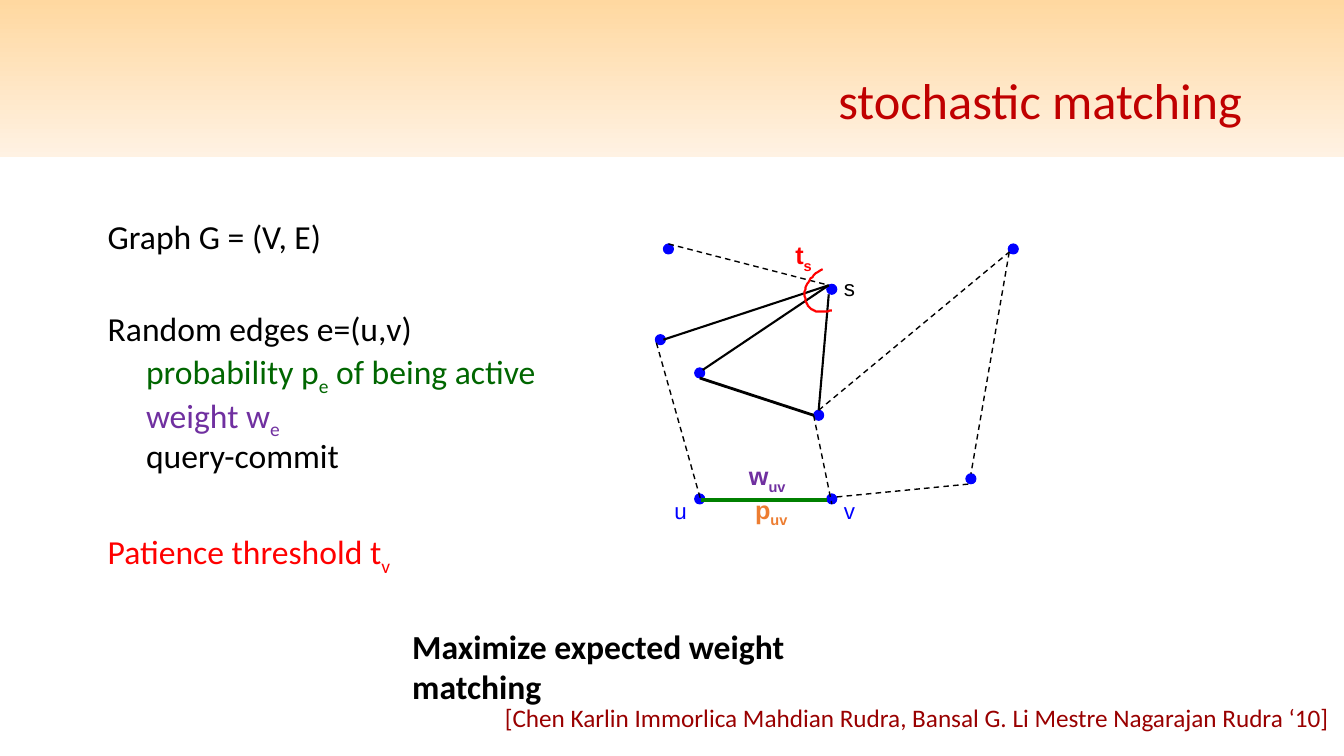
import pptx
import pptx.dml.color
import pptx.enum.dml
import pptx.enum.shapes
import pptx.enum.text
import pptx.oxml
import pptx.oxml.ns
import pptx.util

PX = 9144  # 100 px to the inch
SLIDE_WIDTH, SLIDE_HEIGHT = 1333, 750
COLORS = {
    "band_top": "FFD8A0", "band_bottom": "FFF2E3", "title": "C00000",
    "black": "000000", "green": "006600", "edge_green": "008000",
    "purple": "7030A0", "red": "FF0000", "blue": "0000FF",
    "orange": "ED7D31", "credit": "990000",
}
ALIGN = pptx.enum.text.PP_ALIGN
DASH = pptx.enum.dml.MSO_LINE
SHAPE = pptx.enum.shapes.MSO_SHAPE


def rgb(name):
    return pptx.dml.color.RGBColor.from_string(COLORS[name])


def px(*lengths):
    return [pptx.util.Emu(round(length * PX)) for length in lengths]


def set_attributes(target, values):
    for name, value in values.items():
        setattr(target, name, value)


def write_paragraph(paragraph, text, color, size, font="Calibri", bold=False, **layout):
    """Write text in which every second part between bars is a subscript."""
    set_attributes(paragraph, layout)
    for index, part in enumerate(text.split("|")):
        if not part:
            continue
        run = paragraph.add_run()
        run.text = part
        set_attributes(run.font, {"name": font, "size": pptx.util.Pt(size), "bold": bold})
        run.font.color.rgb = rgb(color)
        if index % 2:
            run._r.get_or_add_rPr().set("baseline", "-25000")


def add_text(slide, box, text, color, size, wrap=False, **formatting):
    frame = slide.shapes.add_textbox(*px(*box)).text_frame
    frame.word_wrap = wrap
    write_paragraph(frame.paragraphs[0], text, color, size, **formatting)


def add_header(slide, box):
    left, top, width, height = box
    title = slide.shapes.title

    # Gradient band behind the title
    band = slide.shapes.add_shape(SHAPE.RECTANGLE, *px(*box))
    band.shadow.inherit = False
    band.line.fill.background()
    band.fill.gradient()
    band.fill.gradient_angle = 270
    for stop, name in zip(band.fill.gradient_stops, ("band_top", "band_bottom")):
        stop.color.rgb = rgb(name)
    title._element.addprevious(band._element)

    # Title
    place = px(left + 92, top + 30, width - 183, height - 11)
    set_attributes(title, dict(zip(("left", "top", "width", "height"), place)))
    title.text_frame.vertical_anchor = pptx.enum.text.MSO_ANCHOR.MIDDLE
    write_paragraph(title.text_frame.paragraphs[0], "stochastic matching", "title", 36,
                    alignment=ALIGN.RIGHT, line_spacing=0.9)


def add_problem(slide, box):
    frame = slide.shapes.add_textbox(*px(*box)).text_frame
    frame.word_wrap = True
    # Text, colour, indent in px, space before in points
    lines = [
        ("Graph G = (V, E)", "black", 0, 10),
        ("Random edges e=(u,v)", "black", 0, 43),
        ("probability p|e| of being active", "green", 38, 5),
        ("weight w|e", "purple", 38, 5),
        ("query-commit", "black", 38, 5),
        ("Patience threshold t|v", "red", 0, 43),
    ]
    for index, (text, color, indent, space) in enumerate(lines):
        paragraph = frame.add_paragraph() if index else frame.paragraphs[0]
        write_paragraph(paragraph, text, color, 24, line_spacing=0.8,
                        space_before=pptx.util.Pt(space))
        paragraph._p.get_or_add_pPr().set("marL", str(indent * PX))


def add_edge(slide, start, end, color, width, dash=None):
    edge = slide.shapes.add_connector(
        pptx.enum.shapes.MSO_CONNECTOR.STRAIGHT, *px(*start, *end))
    edge.line.color.rgb = rgb(color)
    set_attributes(edge.line, {"width": pptx.util.Pt(width), "dash_style": dash})
    properties = edge._element.spPr
    properties.append(pptx.oxml.parse_xml(
        "<a:effectLst %s/>" % pptx.oxml.ns.nsdecls("a")))


def bezier_points(controls, steps=10):
    """Points along joined cubic curves, three new controls to each curve."""
    points = [controls[0]]
    for first in range(0, len(controls) - 1, 3):
        a, b, c, d = controls[first:first + 4]
        for step in range(1, steps + 1):
            t = step / steps
            s = 1 - t
            points.append(tuple(
                s ** 3 * a[i] + 3 * s * s * t * b[i] + 3 * s * t * t * c[i] + t ** 3 * d[i]
                for i in (0, 1)))
    return points


def add_graph(slide, box):
    left, top = box[:2]

    def at(point):
        return left + point[0], top + point[1]

    # Vertices
    vertices = [(8, 0), (0, 90), (39, 123), (157, 165), (39, 248),
                (170, 40), (350, 0), (308, 228), (170, 248)]
    for vertex in vertices:
        dot = slide.shapes.add_shape(SHAPE.OVAL, *px(*at(vertex), 10, 10))
        dot.shadow.inherit = False
        dot.fill.solid()
        dot.fill.fore_color.rgb = rgb("blue")
        dot.line.color.rgb = rgb("blue")
        dot.line.width = pptx.util.Pt(0.75)

    # Edges
    edge_styles = [
        (("black", 1.5), [((47, 125), (172, 41)), ((172, 41), (8, 95)),
                          ((172, 50), (162, 165))]),
        (("black", 1.5, DASH.ROUND_DOT), [((47, 254), (172, 254))]),
        (("edge_green", 2.25), [((45, 254), (170, 254))]),
        (("black", 2), [((44, 133), (157, 170))]),
        (("black", 1, DASH.DASH), [
            ((13, 0), (172, 41)), ((162, 165), (351, 8)), ((351, 8), (313, 228)),
            ((180, 251), (313, 238)), ((157, 170), (175, 258)), ((1, 98), (45, 254))]),
    ]
    for style, edges in edge_styles:
        for start, end in edges:
            add_edge(slide, at(start), at(end), *style)

    # Patience arc around s
    controls = [(175, 66), (168, 67), (162, 68), (158, 66), (154, 65), (151, 62),
                (150, 58), (148, 54), (147, 47), (150, 41), (152, 36), (158, 29), (166, 25)]
    points = [at(point) for point in bezier_points(controls)]
    builder = slide.shapes.build_freeform(*points[0], scale=PX)
    builder.add_line_segments(points[1:], close=False)
    arc = builder.convert_to_shape()
    arc.shadow.inherit = False
    arc.fill.background()
    arc.line.color.rgb = rgb("red")
    arc.line.width = pptx.util.Pt(1.5)

    # Labels: offset and size, text, colour, size, bold
    labels = [
        ((129, -9), (38, 40), "t|s", "red", 18, True),
        ((89, 243), (55, 40), "p|uv", "orange", 18, True),
        ((83, 210), (60, 40), "w|uv", "purple", 18, True),
        ((177, 25), (31, 37), "s", "black", 16, False),
        ((177, 246), (31, 37), "v", "blue", 16, False),
        ((9, 246), (32, 37), "u", "blue", 16, False),
    ]
    for offset, size, text, color, points_high, bold in labels:
        add_text(slide, (*at(offset), *size), text, color, points_high,
                 font="Arial", bold=bold)


def main():
    presentation = pptx.Presentation()
    presentation.slide_width, presentation.slide_height = px(SLIDE_WIDTH, SLIDE_HEIGHT)
    slide = presentation.slides.add_slide(presentation.slide_layouts[5])

    add_header(slide, (0, 0, SLIDE_WIDTH, 156))
    add_problem(slide, (97, 217, 458, 349))
    add_graph(slide, (650, 242, 360, 268))

    # Goal and credit
    add_text(slide, (399, 616, 503, 90), "Maximize expected weight matching",
             "black", 24, wrap=True, bold=True)
    add_text(slide, (485, 692, 843, 40),
             "[Chen Karlin Immorlica Mahdian Rudra, Bansal G. Li Mestre Nagarajan Rudra ‘10]",
             "credit", 18, alignment=ALIGN.RIGHT)
    presentation.save("out.pptx")


if __name__ == "__main__":
    main()
